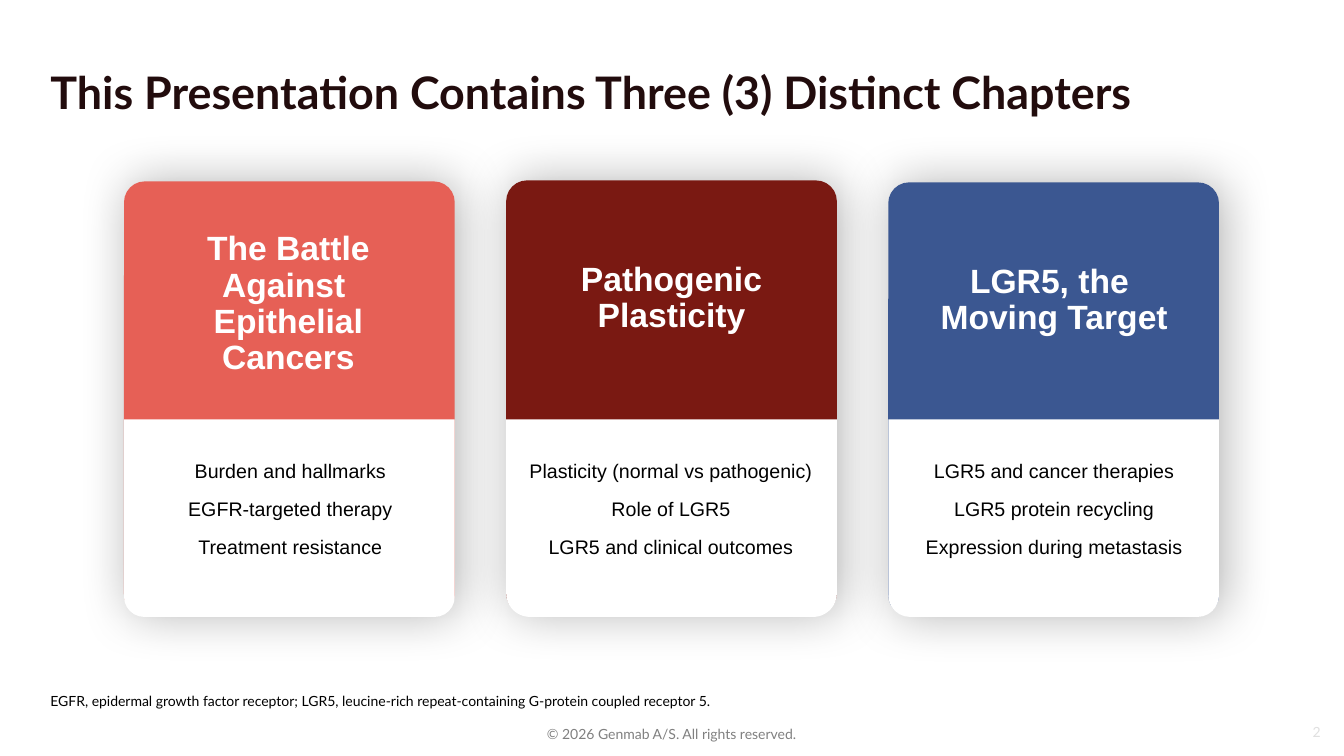
from lxml import etree
from pptx import Presentation
from pptx.dml.color import RGBColor
from pptx.enum.shapes import MSO_SHAPE as Preset
from pptx.enum.text import MSO_ANCHOR as Anchor
from pptx.enum.text import MSO_AUTO_SIZE as AutoSize
from pptx.enum.text import PP_ALIGN as Align
from pptx.oxml.ns import qn
from pptx.util import Inches, Pt

WHITE = RGBColor(0xFF, 0xFF, 0xFF)
BLACK = RGBColor(0x00, 0x00, 0x00)
TITLE_COLOR = RGBColor(0x22, 0x0C, 0x0D)
GRAY = RGBColor(0x80, 0x80, 0x80)
PALE_GRAY = RGBColor(0xE0, 0xE0, 0xE0)
CORAL = RGBColor(0xE6, 0x60, 0x56)
MAROON = RGBColor(0x7A, 0x19, 0x12)
BLUE = RGBColor(0x3B, 0x57, 0x91)

CARD_LEFT, CARD_STEP, CARD_WIDTH, CARD_HEIGHT = 1.23, 3.79, 3.28, 4.3
PANEL_TOP, PANEL_HEIGHT = 4.16, 1.96
TOPICS_TOP, TOPICS_HEIGHT = 4.53, 1.07

CHAPTERS = [
    {"heading": "The Battle Against \nEpithelial Cancers", "color": CORAL,
     "top": 1.8, "curve": 0.102,
     "heading_box": (1.27, 2.25, 3.18, 1.82), "topics_span": (1.45, 2.86),
     "topics": ["Burden and hallmarks", "EGFR-targeted therapy",
                "Treatment resistance"]},
    {"heading": "Pathogenic Plasticity", "color": MAROON,
     "top": 1.79, "curve": 0.12,
     "heading_box": (5.07, 2.55, 3.18, 1.55), "topics_span": (4.99, 3.33),
     "topics": ["Plasticity (normal vs pathogenic)", "Role of LGR5",
                "LGR5 and clinical outcomes"]},
    {"heading": "LGR5, the \nMoving Target", "color": BLUE,
     "top": 1.81, "curve": 0.109,
     "heading_box": (8.8, 2.57, 3.31, 1.55), "topics_span": (8.82, 3.27),
     "topics": ["LGR5 and cancer therapies", "LGR5 protein recycling",
                "Expression during metastasis"]},
]


def write_text(paragraph, text, font="Arial", size=14, color=BLACK, bold=False,
               align=Align.LEFT, line_spacing=1.0, before=0, after=0):
    paragraph.text = text
    paragraph.alignment = align
    paragraph.line_spacing = line_spacing
    paragraph.space_before = Pt(before)
    paragraph.space_after = Pt(after)
    for run in paragraph.runs:
        run.font.name = font
        run.font.size = Pt(size)
        run.font.bold = bold
        run.font.color.rgb = color


class ChapterSlide:
    def __init__(self, presentation):
        self.slide = presentation.slides.add_slide(presentation.slide_layouts[6])

    def text(self, box, lines, anchor=Anchor.TOP, insets=(0.1, 0.05),
             grow=False, **style):
        shape = self.slide.shapes.add_textbox(*map(Inches, box))
        frame = shape.text_frame
        frame.word_wrap = True
        frame.auto_size = AutoSize.SHAPE_TO_FIT_TEXT if grow else AutoSize.NONE
        frame.vertical_anchor = anchor
        frame.margin_left = frame.margin_right = Inches(insets[0])
        frame.margin_top = frame.margin_bottom = Inches(insets[1])
        for index, line in enumerate(lines):
            paragraph = frame.add_paragraph() if index else frame.paragraphs[0]
            write_text(paragraph, line, **style)

    def shape(self, shapes, preset, box, color, curve):
        shape = shapes.add_shape(preset, *map(Inches, box))
        shape.adjustments[0] = curve
        shape.fill.solid()
        shape.fill.fore_color.rgb = color
        shape.line.fill.background()
        shape.shadow.inherit = False
        return shape

    def soft_shadow(self, shape):
        effects = shape._element.spPr.find(qn("a:effectLst"))
        shadow = etree.SubElement(effects, qn("a:outerShdw"), blurRad=str(Pt(35.6)),
                                  dist=str(Pt(3)), dir="0", algn="ctr",
                                  rotWithShape="0")
        tint = etree.SubElement(shadow, qn("a:srgbClr"), val="000000")
        etree.SubElement(tint, qn("a:alpha"), val="30000")

    def card(self, left, chapter):
        shapes = self.slide.shapes.add_group_shape().shapes
        card = self.shape(shapes, Preset.ROUNDED_RECTANGLE,
                          (left, chapter["top"], CARD_WIDTH, CARD_HEIGHT),
                          chapter["color"], 0.063)
        self.soft_shadow(card)
        panel = self.shape(shapes, Preset.ROUND_2_SAME_RECTANGLE,
                           (left, PANEL_TOP, CARD_WIDTH, PANEL_HEIGHT),
                           WHITE, chapter["curve"])
        panel.rotation = 180

    def topics(self, chapter):
        left, width = chapter["topics_span"]
        self.text((left, TOPICS_TOP, width, TOPICS_HEIGHT), chapter["topics"],
                  grow=True, align=Align.CENTER, line_spacing=0.9, after=12)

    def heading(self, chapter):
        self.text(chapter["heading_box"], [chapter["heading"]], insets=(0.3, 0.05),
                  size=24, color=WHITE, bold=True, align=Align.CENTER,
                  line_spacing=0.9)


def main():
    presentation = Presentation()
    presentation.slide_width = Inches(13.33)
    presentation.slide_height = Inches(7.5)
    page = ChapterSlide(presentation)

    for index, chapter in enumerate(CHAPTERS):
        page.card(CARD_LEFT + index * CARD_STEP, chapter)
    page.text((0.5, 6.64, 12.33, 0.4),
              ["EGFR, epidermal growth factor receptor; LGR5, leucine-rich "
               "repeat-containing G-protein coupled receptor 5."],
              anchor=Anchor.BOTTOM, insets=(0, 0), font="Lato", size=10,
              line_spacing=0.9)
    page.text((0.5, 0.73, 12.33, 0.44),
              ["This Presentation Contains Three (3) Distinct Chapters"],
              anchor=Anchor.BOTTOM, insets=(0, 0), grow=True, font="Lato",
              size=32, color=TITLE_COLOR, bold=True, line_spacing=0.79)
    page.text((4.1, 7.14, 5.12, 0.27), ["© 2026 Genmab A/S. All rights reserved."],
              anchor=Anchor.BOTTOM, insets=(0, 0.05), grow=True, font="Lato",
              size=10, color=GRAY, align=Align.CENTER)
    page.text((12.6, 7.13, 0.5, 0.27), ["2"], anchor=Anchor.MIDDLE, insets=(0, 0),
              font="Lato", size=10, color=PALE_GRAY, align=Align.RIGHT)
    for chapter in CHAPTERS:
        page.topics(chapter)
    for chapter in CHAPTERS:
        page.heading(chapter)

    presentation.save("out.pptx")


if __name__ == "__main__":
    main()
